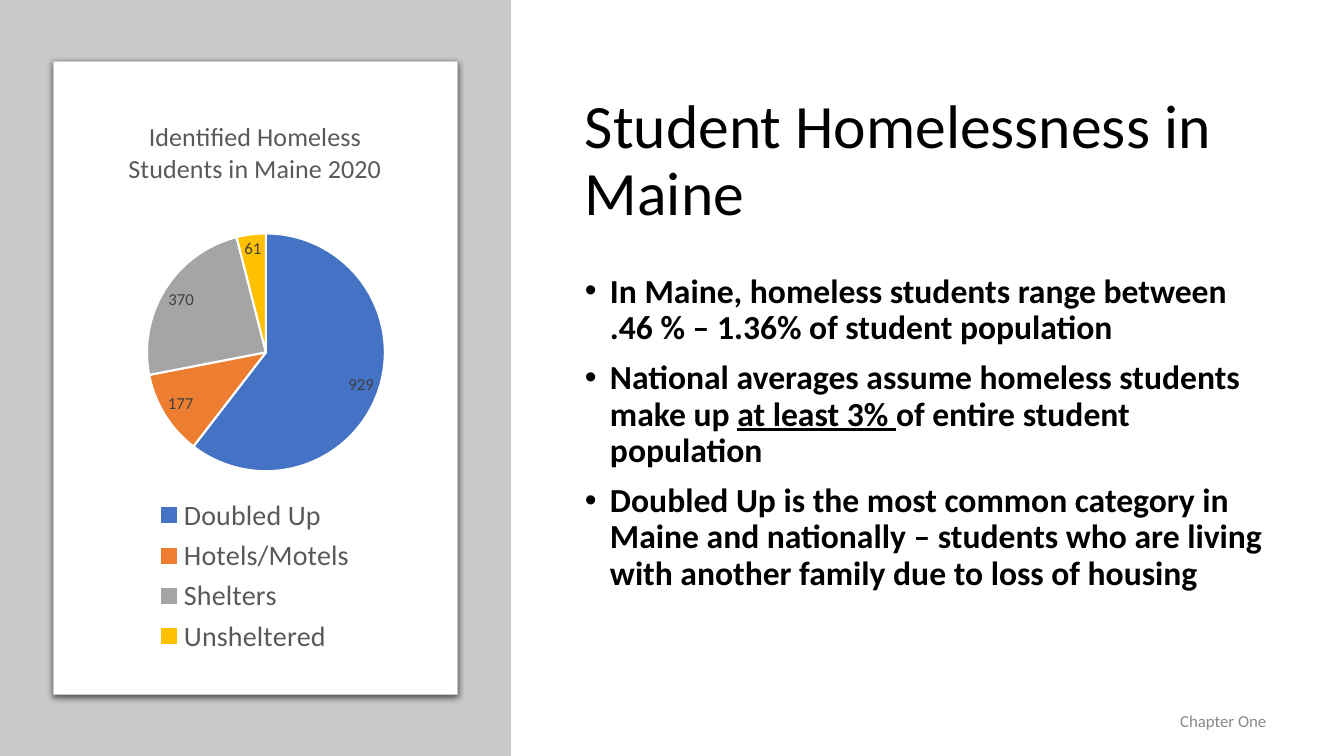
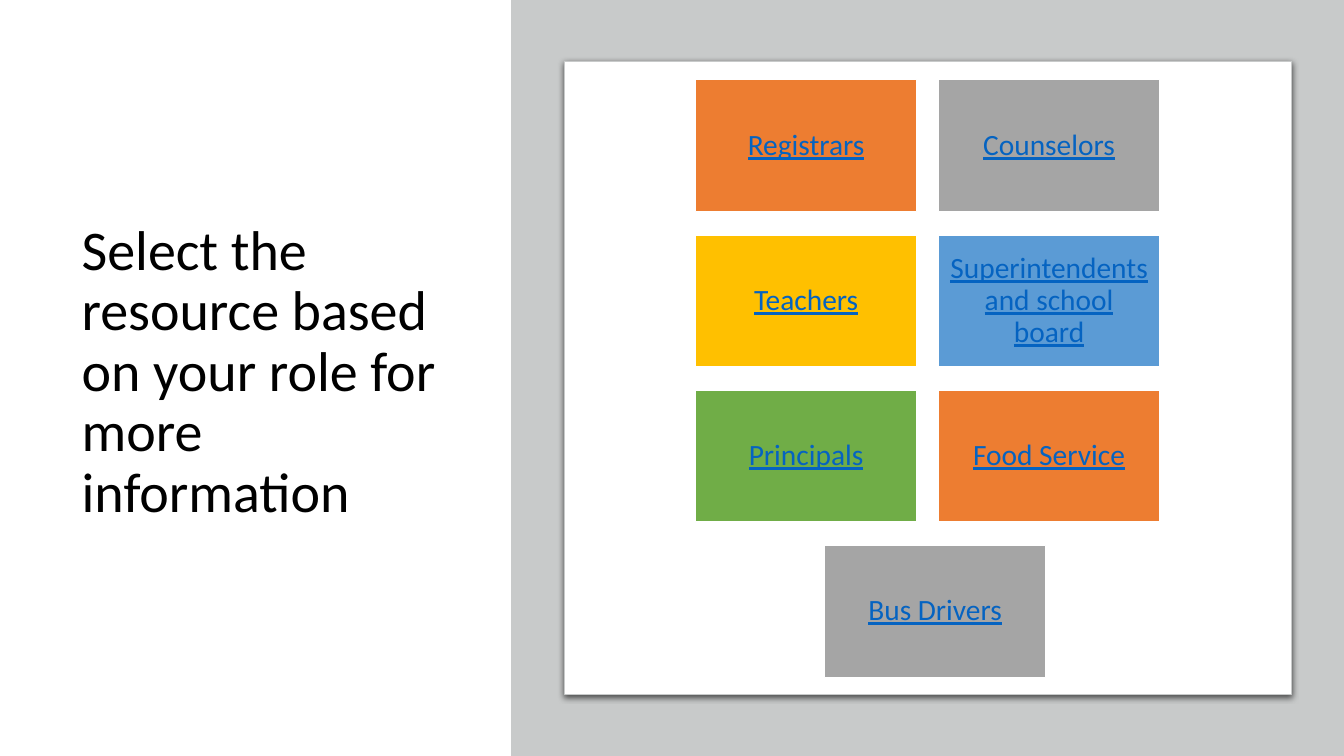
from dataclasses import dataclass
from typing import Any

from lxml import etree
from pptx import Presentation
from pptx.chart.data import CategoryChartData
from pptx.dml.color import RGBColor
from pptx.enum.chart import XL_CHART_TYPE, XL_LABEL_POSITION, XL_LEGEND_POSITION
from pptx.enum.shapes import MSO_SHAPE
from pptx.enum.text import MSO_ANCHOR, MSO_AUTO_SIZE, PP_ALIGN
from pptx.util import Pt

PX = 9144
WIDE, HIGH = 1333, 750
SPLIT = 507
LEFT, MID, RIGHT = PP_ALIGN.LEFT, PP_ALIGN.CENTER, PP_ALIGN.RIGHT
CENTER, TOP = MSO_ANCHOR.MIDDLE, MSO_ANCHOR.TOP
FIXED = MSO_AUTO_SIZE.NONE
RECT, ROUND = MSO_SHAPE.RECTANGLE, MSO_SHAPE.ROUNDED_RECTANGLE
PIE, BOTTOM, FIT = XL_CHART_TYPE.PIE, XL_LEGEND_POSITION.BOTTOM, XL_LABEL_POSITION.BEST_FIT
FACE = "Calibri"
BLACK, WHITE, BAND = "000000", "FFFFFF", "C8CACA"
GRAY, DARK, PALE, LINK = "595959", "404040", "898989", "0563C1"
BLUE, ORANGE, SILVER, GOLD = "4472C4", "ED7D31", "A5A5A5", "FFC000"
SKY, GREEN = "5B9BD5", "70AD47"
NS = "http://schemas.openxmlformats.org/drawingml/2006/main"
SHADE = f"""<a:effectLst xmlns:a="{NS}">
<a:outerShdw blurRad="57150" dist="19050" dir="5400000" algn="ctr" rotWithShape="0">
<a:srgbClr val="000000"><a:alpha val="63000"/></a:srgbClr></a:outerShdw></a:effectLst>"""


@dataclass
class Box:
    x: int
    y: int
    w: int
    h: int

    def emu(self) -> tuple[int, ...]:
        return tuple(n * PX for n in (self.x, self.y, self.w, self.h))


@dataclass
class Tile:
    text: str
    fill: str


@dataclass
class Slice:
    name: str
    count: int
    fill: str


PARTS = [
    Slice("Doubled Up", 929, BLUE),
    Slice("Hotels/Motels", 177, ORANGE),
    Slice("Shelters", 370, SILVER),
    Slice("Unsheltered", 61, GOLD),
]
POINTS = [
    [("In Maine, homeless students range between .46 % – 1.36% of student population", False)],
    [("National averages assume homeless students make up ", False), ("at least 3% ", True),
     ("of entire student population", False)],
    [("Doubled Up is the most common category in Maine and nationally – students "
      "who are living with another family due to loss of housing", False)],
]
TILES = [
    Tile("Registrars", ORANGE), Tile("Counselors", SILVER),
    Tile("Teachers", GOLD), Tile("Superintendents and school board", SKY),
    Tile("Principals", GREEN), Tile("Food Service", ORANGE),
    Tile("Bus Drivers", SILVER),
]
GRID = Box(690, 79, 219, 131)
GAP_X, GAP_Y = 22, 23
LAST_X = 818


def tint(hue: str) -> RGBColor:
    return RGBColor.from_string(hue)


def apply(item: Any, form: dict[str, Any]) -> None:
    for key, val in form.items():
        setattr(item, key, val)


def style(font: Any, size: float, hue: str, **more: Any) -> None:
    apply(font, {"size": Pt(size), "name": FACE, **more})
    font.color.rgb = tint(hue)


def place(item: Any, box: Box) -> None:
    apply(item, dict(zip(("left", "top", "width", "height"), box.emu())))


def frame(item: Any, anchor: Any) -> Any:
    text = item.text_frame
    apply(text, {"word_wrap": True, "auto_size": FIXED, "vertical_anchor": anchor})
    return text


def title(slide: Any, text: str, box: Box, size: int) -> None:
    head = slide.shapes.title
    place(head, box)
    para = frame(head, CENTER).paragraphs[0]
    apply(para, {"alignment": LEFT, "line_spacing": 0.9})
    run = para.add_run()
    run.text = text
    style(run.font, size, BLACK)


def block(slide: Any, kind: Any, box: Box, fill: str, edge: str = "", width: float = 1) -> Any:
    item = slide.shapes.add_shape(kind, *box.emu())
    item.shadow.inherit = False
    item.fill.solid()
    item.fill.fore_color.rgb = tint(fill)
    if edge:
        item.line.color.rgb = tint(edge)
        item.line.width = Pt(width)
    else:
        item.line.fill.background()
    return item


def panel(slide: Any, band: Box, card: Box) -> None:
    block(slide, RECT, band, BAND)
    item = block(slide, ROUND, card, WHITE, BAND, 0.75)
    item.adjustments[0] = 0
    flat = item.element.spPr.find(f"{{{NS}}}effectLst")
    flat.getparent().replace(flat, etree.fromstring(SHADE))


def points(slide: Any, box: Box) -> None:
    body = slide.placeholders[1]
    place(body, box)
    text = frame(body, TOP)
    for spot, runs in enumerate(POINTS):
        para = text.add_paragraph() if spot else text.paragraphs[0]
        apply(para, {"line_spacing": 0.9, "space_before": Pt(10)})
        props = para._p.get_or_add_pPr()
        props.set("marL", str(25 * PX))
        props.set("indent", str(-25 * PX))
        for words, under in runs:
            run = para.add_run()
            run.text = words
            style(run.font, 24, BLACK, bold=True, underline=under)


def foot(slide: Any, words: str) -> None:
    item = slide.shapes.add_textbox(*Box(570, 695, 696, 40).emu())
    para = frame(item, CENTER).paragraphs[0]
    apply(para, {"alignment": RIGHT, "space_after": Pt(6)})
    run = para.add_run()
    run.text = words
    style(run.font, 12, PALE)


def pie(slide: Any, name: str, box: Box) -> None:
    data = CategoryChartData()
    data.categories = [part.name for part in PARTS]
    data.add_series(name, [part.count for part in PARTS])
    chart = slide.shapes.add_chart(PIE, *box.emu(), data).chart
    style(chart.font, 10, BLACK)
    chart.has_title = True
    run = chart.chart_title.text_frame.paragraphs[0].add_run()
    run.text = name
    style(run.font, 18.6, GRAY, bold=False)
    chart.has_legend = True
    apply(chart.legend, {"position": BOTTOM, "include_in_layout": False})
    style(chart.legend.font, 20, GRAY)
    plot = chart.plots[0]
    apply(plot, {"vary_by_categories": True, "has_data_labels": True})
    apply(plot.data_labels, {"show_value": True, "show_percentage": False, "position": FIT})
    style(plot.data_labels.font, 12, DARK)
    for spot, part in enumerate(PARTS):
        look = plot.series[0].points[spot].format
        look.fill.solid()
        look.fill.fore_color.rgb = tint(part.fill)
        look.line.color.rgb = tint(WHITE)
        look.line.width = Pt(1.5)


def tiles(slide: Any) -> None:
    for spot, tile in enumerate(TILES):
        row, col = divmod(spot, 2)
        x = LAST_X if spot == len(TILES) - 1 else GRID.x + col * (GRID.w + GAP_X)
        box = Box(x, GRID.y + row * (GRID.h + GAP_Y), GRID.w, GRID.h)
        text = frame(block(slide, RECT, box, tile.fill, WHITE), CENTER)
        sides = ("left", "top", "right", "bottom")
        apply(text, {f"margin_{side}": 9 * PX for side in sides})
        para = text.paragraphs[0]
        apply(para, {"alignment": MID, "line_spacing": 0.9})
        run = para.add_run()
        run.text = tile.text
        style(run.font, 21, LINK, underline=True)


def main() -> None:
    deck = Presentation()
    apply(deck, {"slide_width": WIDE * PX, "slide_height": HIGH * PX})

    facts = deck.slides.add_slide(deck.slide_layouts[1])
    title(facts, "Student Homelessness in Maine", Box(570, 69, 702, 183), 44)
    panel(facts, Box(0, 0, SPLIT, HIGH), Box(53, 61, 401, 628))
    points(facts, Box(570, 267, 702, 414))
    foot(facts, "Chapter One")
    pie(facts, "Identified Homeless Students in Maine 2020", Box(83, 96, 340, 558))

    roles = deck.slides.add_slide(deck.slide_layouts[5])
    title(roles, "Select the resource based on your role for more information",
          Box(71, 69, 401, 602), 40)
    panel(roles, Box(SPLIT, 0, WIDE - SPLIT, HIGH), Box(560, 61, 721, 628))
    tiles(roles)

    deck.save("out.pptx")


if __name__ == "__main__":
    main()
